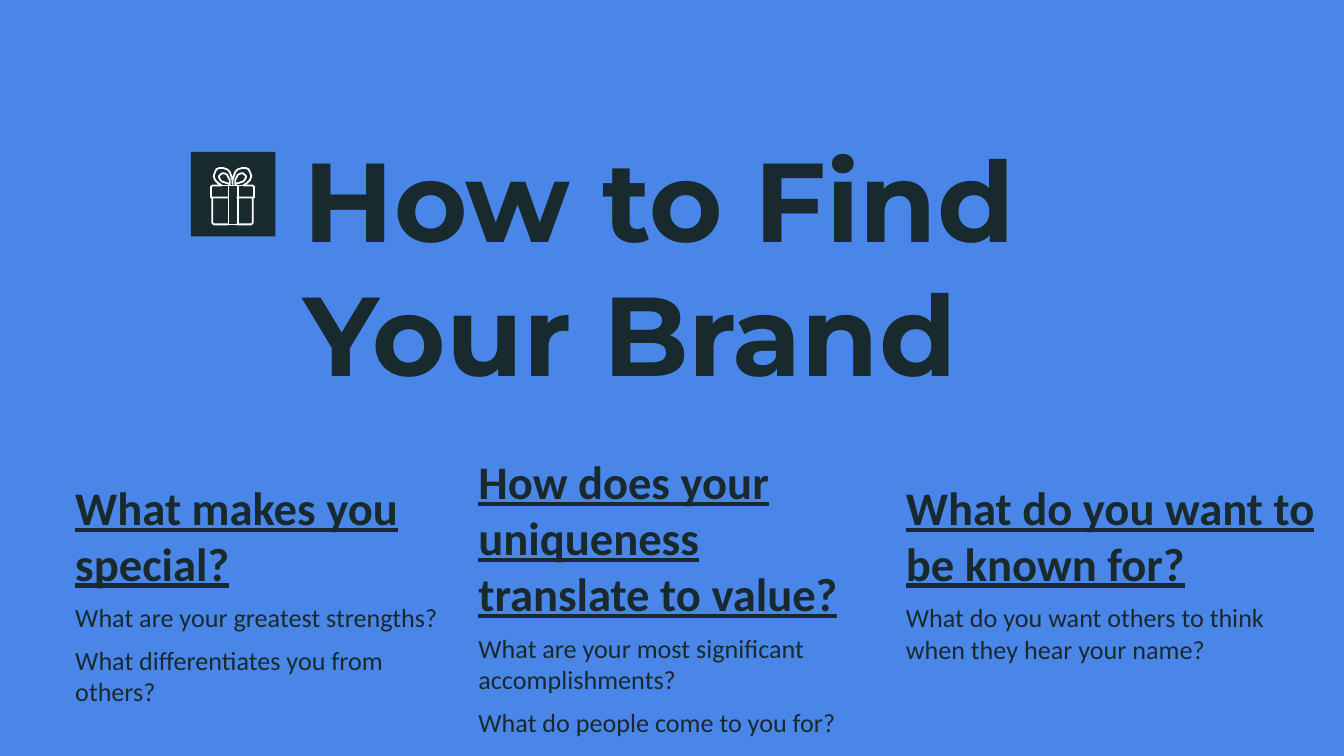
from dataclasses import dataclass

from lxml import etree
from pptx import Presentation
from pptx.dml.color import RGBColor
from pptx.enum import shapes, text
from pptx.oxml import ns
from pptx.util import Inches, Pt

BLUE = RGBColor(0x4A, 0x86, 0xE8)
DARK = RGBColor(0x18, 0x2A, 0x2E)
WHITE = RGBColor(0xFF, 0xFF, 0xFF)
SLIDE_WIDTH = 10
SLIDE_HEIGHT = SLIDE_WIDTH * 9 / 16
ICON_LINE = Pt(0.96)
GIFT_CENTER = 1.73

Point = tuple[float, float]


@dataclass(frozen=True)
class Question:
    placeholder: int
    left: float
    top: float
    width: float
    height: float
    heading: str
    prompts: tuple[str, ...]


QUESTIONS = (
    Question(1, 0.46, 3.46, 3, 1.87, "What makes you special?",
             ("What are your greatest strengths?",
              "What differentiates you from others?")),
    Question(2, 3.46, 3.27, 3.07, 1.58,
             "How does your uniqueness translate to value?",
             ("What are your most significant accomplishments?",
              "What do people come to you for?")),
    Question(3, 6.64, 3.46, 3.29, 1.58, "What do you want to be known for?",
             ("What do you want others to think when they hear your name?",)),
)

LID_HALF = [
    (1.7, 1.47), (1.57, 1.47), (1.57, 1.39), (1.58, 1.38), (1.65, 1.38),
    (1.62, 1.36), (1.6, 1.34), (1.59, 1.31), (1.6, 1.28), (1.61, 1.26),
    (1.63, 1.25), (1.66, 1.25), (1.69, 1.26), (1.71, 1.28), (1.72, 1.31),
    (1.73, 1.34), (1.73, 1.37),
]
BOW_LOOP = [
    (1.64, 1.3), (1.65, 1.29), (1.67, 1.29), (1.69, 1.3), (1.7, 1.32),
    (1.71, 1.34), (1.71, 1.37), (1.68, 1.36), (1.65, 1.35), (1.64, 1.34),
    (1.63, 1.32), (1.63, 1.31), (1.64, 1.3),
]
BOX_HALF = [(1.58, 1.47), (1.58, 1.66), (1.59, 1.67), (1.7, 1.67)]
RIBBON = [(1.7, 1.38), (1.7, 1.67), (1.77, 1.67), (1.77, 1.38)]


def mirror(points: list[Point]) -> list[Point]:
    return [(2 * GIFT_CENTER - x, y) for x, y in points]


def draw_outline(slide, points: list[Point]) -> None:
    start, *rest = [(Inches(x), Inches(y)) for x, y in points]
    builder = slide.shapes.build_freeform(*start)
    builder.add_line_segments(rest, close=False)
    outline = builder.convert_to_shape()
    outline.shadow.inherit = False
    outline.fill.background()
    outline.line.color.rgb = WHITE
    outline.line.width = ICON_LINE


def draw_gift(slide) -> None:
    tile = slide.shapes.add_shape(
        shapes.MSO_SHAPE.RECTANGLE,
        Inches(1.42), Inches(1.13), Inches(0.63), Inches(0.63))
    tile.shadow.inherit = False
    tile.fill.solid()
    tile.fill.fore_color.rgb = DARK
    tile.line.fill.background()

    draw_outline(slide, LID_HALF + mirror(LID_HALF)[::-1])
    draw_outline(slide, RIBBON)
    for half in (BOW_LOOP, BOX_HALF):
        draw_outline(slide, half)
        draw_outline(slide, mirror(half))

    rim = slide.shapes.add_connector(
        shapes.MSO_CONNECTOR.STRAIGHT,
        Inches(1.65), Inches(1.38), Inches(1.81), Inches(1.38))
    rim.line.color.rgb = WHITE
    rim.line.width = ICON_LINE
    etree.SubElement(rim._element.spPr, ns.qn("a:effectLst"))


def place(holder, left: float, top: float, width: float, height: float):
    holder.left, holder.top = Inches(left), Inches(top)
    holder.width, holder.height = Inches(width), Inches(height)
    frame = holder.text_frame
    frame.margin_left = frame.margin_right = Inches(0.1)
    frame.margin_top = frame.margin_bottom = Inches(0.1)
    frame.word_wrap = True
    frame.auto_size = text.MSO_AUTO_SIZE.NONE
    frame.vertical_anchor = text.MSO_ANCHOR.TOP
    return frame


def style(paragraph, font_name: str, size: float, bold: bool,
          underline: bool = False) -> None:
    paragraph.alignment = text.PP_ALIGN.LEFT
    font = paragraph.font
    font.name = font_name
    font.size = Pt(size)
    font.bold = bold
    font.underline = underline
    font.color.rgb = DARK


def write_question(slide, question: Question) -> None:
    frame = place(slide.placeholders[question.placeholder], question.left,
                  question.top, question.width, question.height)
    frame.text = "\n".join((question.heading, *question.prompts))
    for index, paragraph in enumerate(frame.paragraphs):
        is_heading = index == 0
        paragraph.space_before = Pt(6)
        style(paragraph, "Calibri", 25 if is_heading else 14,
              is_heading, is_heading)
        properties = paragraph._p.get_or_add_pPr()
        properties.set("marL", "0")
        properties.set("indent", "0")
        bullet = etree.Element(ns.qn("a:buNone"))
        properties.find(ns.qn("a:defRPr")).addprevious(bullet)


def main() -> None:
    deck = Presentation()
    deck.slide_width = Inches(SLIDE_WIDTH)
    deck.slide_height = Inches(SLIDE_HEIGHT)
    slide = deck.slides.add_slide(deck.slide_layouts.get_by_name("Comparison"))
    slide.background.fill.solid()
    slide.background.fill.fore_color.rgb = BLUE

    title = place(slide.shapes.title, 2.16, 0.87, 7.45, 2.11)
    title.text = "How to Find Your Brand"
    style(title.paragraphs[0], "Montserrat", 60, True)

    for question in QUESTIONS:
        write_question(slide, question)
    spare = slide.placeholders[4]._element
    spare.getparent().remove(spare)

    draw_gift(slide)
    deck.save("out.pptx")


if __name__ == "__main__":
    main()
